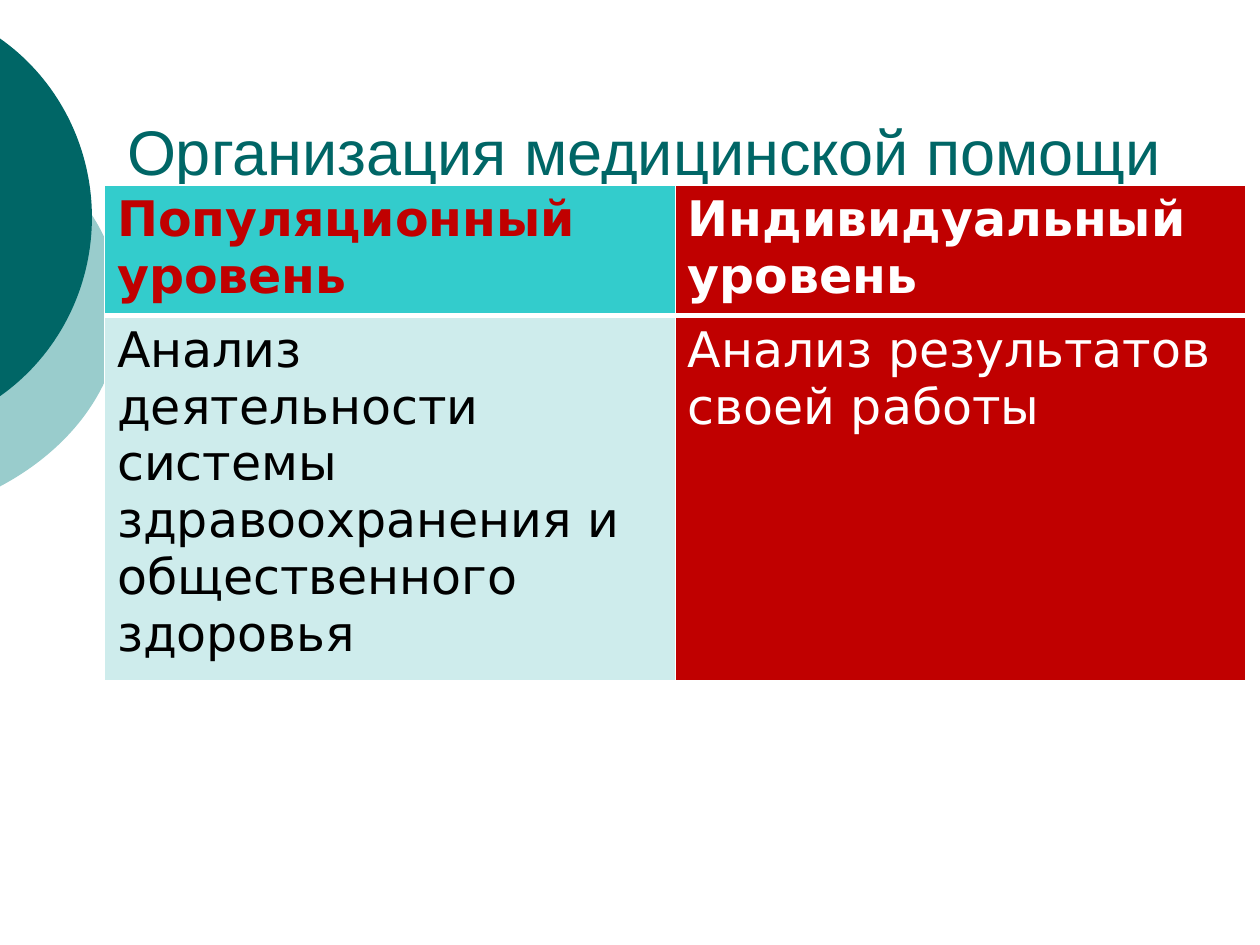
from dataclasses import dataclass
from math import acos, atan2, degrees, sin

from lxml.etree import SubElement
from pptx import Presentation
from pptx.dml.color import RGBColor
from pptx.enum.shapes import MSO_SHAPE
from pptx.enum.text import MSO_ANCHOR
from pptx.oxml.ns import qn
from pptx.util import Inches, Pt


@dataclass(frozen=True)
class Theme:
    teal: str = "006666"
    pale_teal: str = "99CCCC"
    turquoise: str = "33CCCC"
    mint: str = "CEECEC"
    red: str = "C00000"
    white: str = "FFFFFF"
    black: str = "000000"
    title_font: str = "Arial"
    table_font: str = "DejaVu Sans"
    title_size: int = 36
    table_size: int = 28
    thin_border: int = 1
    thick_border: int = 3


THEME = Theme()


def style_font(paragraph, face, size, color, bold=False):
    font = paragraph.font
    font.name, font.size, font.bold = face, Pt(size), bold
    font.color.rgb = RGBColor.from_string(color)


def add_edge_disc(slide, color, left, top, width, height):
    """Ellipse cut off by a chord along the left edge of the slide."""
    disc = slide.shapes.add_shape(
        MSO_SHAPE.CHORD, Inches(left), Inches(top), Inches(width), Inches(height)
    )
    # Angle from the centre to the points where the outline meets the edge
    to_edge = -(left + width / 2)
    half_chord = height / 2 * sin(acos(to_edge / (width / 2)))
    angle = degrees(atan2(half_chord, to_edge))
    # One degree is 60000 units, and adjustments count in 100000 units
    disc.adjustments[0] = (360 - angle) * 0.6
    disc.adjustments[1] = angle * 0.6
    disc.shadow.inherit = False
    disc.fill.solid()
    disc.fill.fore_color.rgb = RGBColor.from_string(color)
    disc.line.fill.background()


def add_title(slide, text):
    title = slide.shapes.add_textbox(Inches(0.91), Inches(0.29), Inches(9.09), Inches(1.25))
    frame = title.text_frame
    frame.word_wrap = True
    frame.vertical_anchor = MSO_ANCHOR.BOTTOM
    frame.text = text
    style_font(frame.paragraphs[0], THEME.title_font, THEME.title_size, THEME.teal)


def set_borders(cell, bottom_width):
    properties = cell._tc.get_or_add_tcPr()
    for position, side in enumerate(("lnL", "lnR", "lnT", "lnB")):
        width = bottom_width if side == "lnB" else THEME.thin_border
        border = SubElement(properties, qn(f"a:{side}"), w=str(Pt(width)))
        fill = SubElement(border, qn("a:solidFill"))
        SubElement(fill, qn("a:srgbClr"), val=THEME.white)
        properties.insert(position, border)


def add_levels_table(slide, rows, heights):
    frame = slide.shapes.add_table(
        len(rows), len(rows[0]), Inches(0.83), Inches(1.47), Inches(9.06), Inches(sum(heights))
    )
    table = frame.table
    for column in table.columns:
        column.width = Inches(4.53)
    for row_index, (row, height) in enumerate(zip(rows, heights)):
        table.rows[row_index].height = Inches(height)
        is_header = row_index == 0
        for column_index, (text, fill, color) in enumerate(row):
            cell = table.cell(row_index, column_index)
            cell.text = text
            cell.fill.solid()
            cell.fill.fore_color.rgb = RGBColor.from_string(fill)
            set_borders(cell, THEME.thick_border if is_header else THEME.thin_border)
            style_font(cell.text_frame.paragraphs[0], THEME.table_font,
                       THEME.table_size, color, is_header)


def main():
    presentation = Presentation()
    presentation.slide_width, presentation.slide_height = Inches(10), Inches(7.5)
    slide = presentation.slides.add_slide(presentation.slide_layouts[6])

    # Discs at the left edge
    add_edge_disc(slide, THEME.pale_teal, left=-3.54, top=0.75, width=4.5, height=3.42)
    add_edge_disc(slide, THEME.teal, left=-2.65, top=0, width=3.38, height=3.45)

    # Title
    add_title(slide, "Организация медицинской помощи")

    # Levels of care: text, fill, text colour
    levels = [
        [("Популяционный уровень", THEME.turquoise, THEME.red),
         ("Индивидуальный уровень", THEME.red, THEME.white)],
        [("Анализ деятельности системы здравоохранения и общественного здоровья",
          THEME.mint, THEME.black),
         ("Анализ результатов своей работы", THEME.red, THEME.white)],
    ]
    add_levels_table(slide, levels, heights=(1.03, 2.43))

    presentation.save("out.pptx")


if __name__ == "__main__":
    main()
